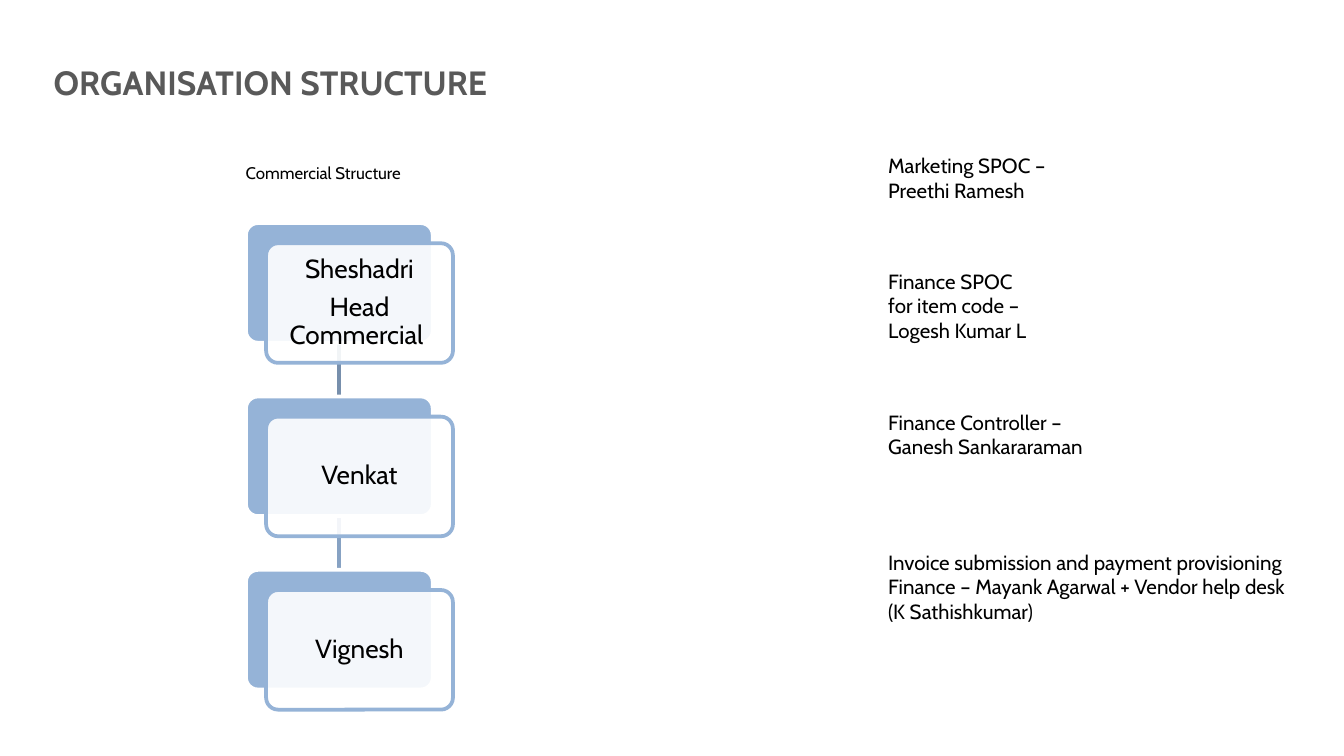
from lxml.etree import SubElement
from pptx import Presentation
from pptx.dml.color import RGBColor
from pptx.enum.shapes import MSO_CONNECTOR, MSO_SHAPE
from pptx.enum.text import MSO_ANCHOR, PP_ALIGN
from pptx.oxml.ns import qn
from pptx.util import Inches, Pt

BLACK = RGBColor(0x00, 0x00, 0x00)
WHITE = RGBColor(0xFF, 0xFF, 0xFF)
GREY = RGBColor(0x59, 0x59, 0x59)
BLUE = RGBColor(0x95, 0xB3, 0xD7)
LINKS = [RGBColor(0x77, 0x8F, 0xAC), RGBColor(0x87, 0xA2, 0xC3)]

WIDE = 10
HIGH = WIDE * 9 / 16
LEFT, TOP, STEP = 1.83, 1.66, 1.29  # first card and the row pitch
CARD_W, CARD_H, SHIFT = 1.39, 0.89, 0.15
NOTE_X = 6.51

STAFF = [["Sheshadri", "Head Commercial "], ["Venkat"], ["Vignesh"]]
NOTES = [
    (1.09, 1.48, 0.47, ["Marketing SPOC –", "Preethi Ramesh"]),
    (1.95, 1.29, 0.66, ["Finance SPOC for item code – Logesh Kumar L"]),
    (3.00, 1.91, 0.47, ["Finance Controller – Ganesh Sankararaman"]),
    (4.04, 3.25, 0.66, ["Invoice submission and payment provisioning Finance – "
                        "Mayank Agarwal + Vendor help desk (K Sathishkumar)"]),
]


def write(frame, lines, size, color=BLACK, bold=False):
    frame.word_wrap = True
    frame.text = "\n".join(lines)
    for para in frame.paragraphs:
        font = para.font
        font.name, font.size, font.bold = "Cabin", Pt(size), bold
        font.color.rgb = color


def add_text(slide, box, lines, size, **style):
    frame = slide.shapes.add_textbox(*map(Inches, box)).text_frame
    write(frame, lines, size, **style)
    return frame


def add_card(slide, x, y, fill, line):
    card = slide.shapes.add_shape(
        MSO_SHAPE.ROUNDED_RECTANGLE, *map(Inches, (x, y, CARD_W, CARD_H)))
    card.adjustments[0] = 0.1
    card.shadow.inherit = False
    card.fill.solid()
    card.fill.fore_color.rgb = fill
    card.line.color.rgb = line
    card.line.width = Pt(2)
    return card


def add_person(slide, y, lines):
    """A blue card with a nearly opaque white one, holding the name, on top."""
    add_card(slide, LEFT, y, BLUE, WHITE)
    card = add_card(slide, LEFT + SHIFT, y + SHIFT, WHITE, BLUE)
    tint = card.fill._xPr.find(qn("a:solidFill"))[0]
    SubElement(tint, qn("a:alpha"), val="90000")
    frame = card.text_frame
    write(frame, lines, 14)
    frame.vertical_anchor = MSO_ANCHOR.MIDDLE
    frame.margin_left = frame.margin_right = Inches(0.06)
    frame.margin_top = frame.margin_bottom = Inches(0.06)
    for para in frame.paragraphs:
        para.alignment = PP_ALIGN.CENTER
        para.line_spacing = 0.9
        para.space_after = Pt(4.9)


def add_link(slide, y, color):
    x = LEFT + CARD_W / 2
    link = slide.shapes.add_connector(
        MSO_CONNECTOR.STRAIGHT,
        *map(Inches, (x, y + CARD_H, x, y + STEP)))
    link.line.color.rgb = color
    link.line.width = Pt(2)
    SubElement(link._element.spPr, qn("a:effectLst"))


def main():
    deck = Presentation()
    deck.slide_width, deck.slide_height = Inches(WIDE), Inches(HIGH)
    slide = deck.slides.add_slide(deck.slide_layouts[6])

    title = add_text(slide, (0.4, 0.41, 8.24, 0.4), ["ORGANISATION STRUCTURE"],
                     18, color=GREY, bold=True)
    title.margin_left = 0
    title.vertical_anchor = MSO_ANCHOR.MIDDLE

    rows = [TOP + STEP * i for i in range(len(STAFF))]
    for y, color in zip(rows, LINKS):
        add_link(slide, y, color)
    for y, lines in zip(rows, STAFF):
        add_person(slide, y, lines)

    add_text(slide, (1.73, 1.16, 1.48, 0.25), ["Commercial Structure"], 9)
    for y, wide, high, lines in NOTES:
        add_text(slide, (NOTE_X, y, wide, high), lines, 11)
    deck.save("out.pptx")


if __name__ == "__main__":
    main()
